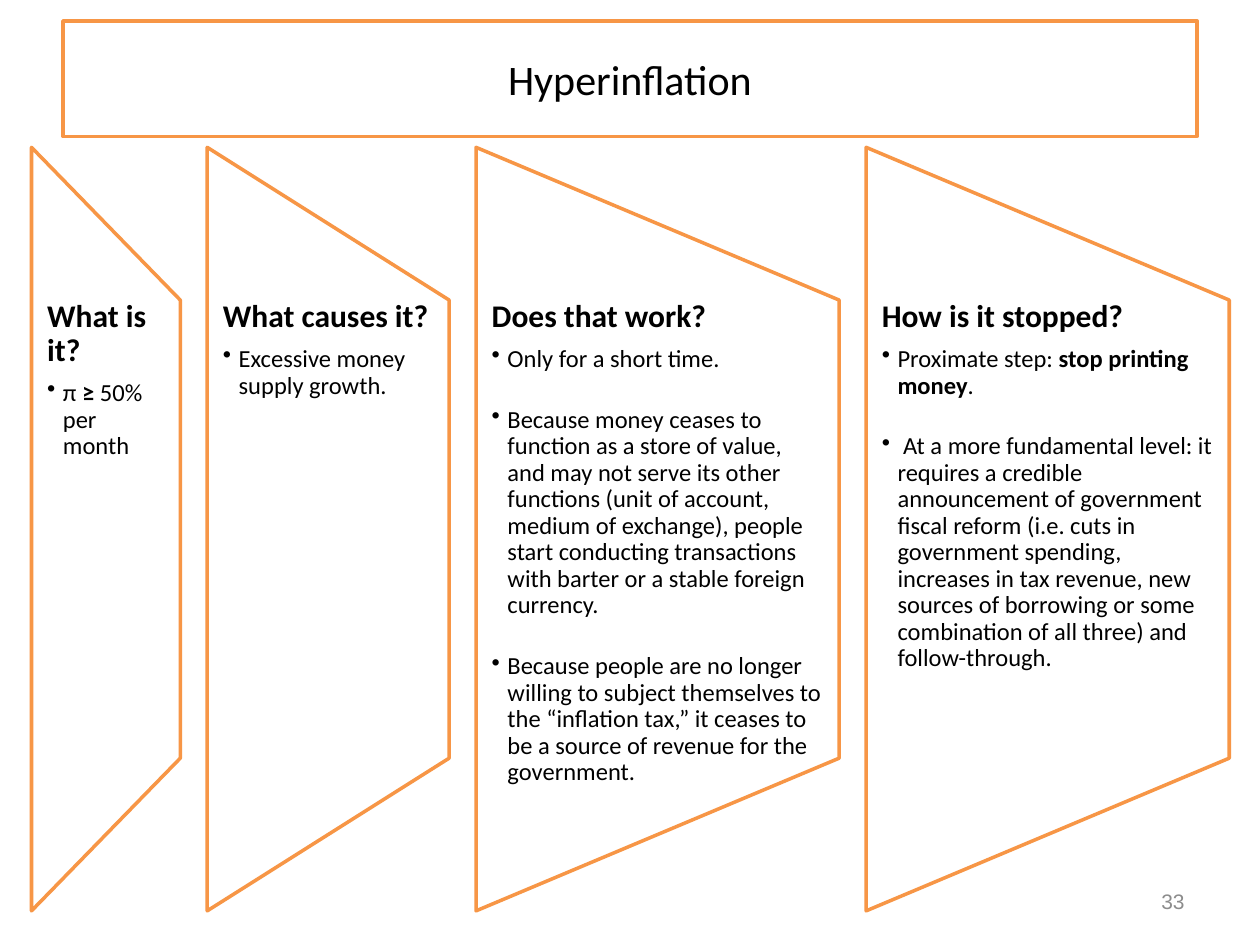
from dataclasses import dataclass

from pptx import Presentation
from pptx.dml.color import RGBColor
from pptx.enum.shapes import MSO_SHAPE as Preset
from pptx.enum.text import MSO_ANCHOR as Anchor, PP_ALIGN as Align
from pptx.oxml.xmlchemy import OxmlElement
from pptx.util import Pt

BLACK, WHITE, GRAY, ORANGE = "000000", "FFFFFF", "8C8C8C", "F79646"

PANEL_LEFT, PANEL_TOP, PANEL_HEIGHT, PANEL_GAP = 18, 84.2, 436.3, 15.4
TEXT_INSET, BULLET_INDENT = 8.96, 9
HEADING_GAP, BULLET_GAP = 7, 19.7

HEADING_FONT = {"name": "Calibri", "size": Pt(18), "bold": True}
BULLET_FONT = {"name": "Calibri", "size": Pt(14), "bold": False}
TITLE_FONT = {"name": "Calibri", "size": Pt(24)}
NUMBER_FONT = {"name": "Arial", "size": Pt(12)}


@dataclass(frozen=True)
class Run:
    text: str
    bold: bool = False


@dataclass(frozen=True)
class Panel:
    width: float
    heading: str
    bullets: tuple[tuple[Run, ...], ...]


PANELS = (
    Panel(85, "What is it?", (
        (Run("π "), Run("≥ ", True), Run("50% per month")),
    )),
    Panel(138.25, "What causes it?", (
        (Run("Excessive money supply growth."),),
    )),
    Panel(207.5, "Does that work?", (
        (Run("Only for a short time."),),
        (Run("Because money ceases to function as a store of value, and may not "
             "serve its other functions (unit of account, medium of exchange), "
             "people start conducting transactions with barter or a stable "
             "foreign currency."),),
        (Run("Because people are no longer willing to subject themselves to the "
             "“inflation tax,” it ceases to be a source of revenue for the "
             "government."),),
    )),
    Panel(207.5, "How is it stopped?", (
        (Run("Proximate step: "), Run("stop printing money", True), Run(".")),
        (Run(" At a more fundamental level: it requires a credible announcement "
             "of government fiscal reform (i.e. cuts in government spending, "
             "increases in tax revenue, new sources of borrowing or some "
             "combination of all three) and follow-through."),),
    )),
)


def color(value: str) -> RGBColor:
    return RGBColor.from_string(value)


def apply(target, values: dict) -> None:
    for attribute, value in values.items():
        setattr(target, attribute, value)


def add_outlined(slide, preset, left: float, top: float, width: float, height: float):
    """Add a white shape with an orange outline and no shadow."""
    shape = slide.shapes.add_shape(preset, Pt(left), Pt(top), Pt(width), Pt(height))
    shape.shadow.inherit = False
    shape.fill.solid()
    shape.fill.fore_color.rgb = color(WHITE)
    shape.line.color.rgb = color(ORANGE)
    shape.line.width = Pt(2)
    return shape


def add_run(paragraph, text: str, font: dict, ink: str = BLACK) -> None:
    run = paragraph.add_run()
    run.text = text
    apply(run.font, font)
    run.font.color.rgb = color(ink)


def add_line(frame, text: str, font: dict, align, ink: str = BLACK) -> None:
    """Fill a frame with one vertically centred line."""
    apply(frame, {"word_wrap": True, "vertical_anchor": Anchor.MIDDLE})
    paragraph = frame.paragraphs[0]
    paragraph.alignment = align
    add_run(paragraph, text, font, ink)


def set_bullet(paragraph) -> None:
    properties = paragraph._p.get_or_add_pPr()
    properties.set("marL", str(Pt(BULLET_INDENT)))
    properties.set("indent", str(-Pt(BULLET_INDENT)))
    bullet = OxmlElement("a:buChar")
    bullet.set("char", "•")
    properties.append(bullet)


def add_panel(slide, panel: Panel, left: float) -> None:
    # The trapezoid is laid on its side, so its own width is the panel height.
    center_x = left + panel.width / 2
    center_y = PANEL_TOP + PANEL_HEIGHT / 2
    trapezoid = add_outlined(
        slide, Preset.FLOWCHART_MANUAL_OPERATION,
        center_x - PANEL_HEIGHT / 2, center_y - panel.width / 2,
        PANEL_HEIGHT, panel.width)
    trapezoid.rotation = 270

    frame = slide.shapes.add_textbox(
        Pt(left), Pt(PANEL_TOP + PANEL_HEIGHT / 5),
        Pt(panel.width), Pt(PANEL_HEIGHT * 3 / 5)).text_frame
    apply(frame, {"word_wrap": True, "vertical_anchor": Anchor.TOP,
                  "margin_left": Pt(TEXT_INSET), "margin_right": Pt(TEXT_INSET),
                  "margin_top": 0, "margin_bottom": 0})
    heading = frame.paragraphs[0]
    apply(heading, {"line_spacing": 0.9, "space_after": Pt(HEADING_GAP)})
    add_run(heading, panel.heading, HEADING_FONT)
    for runs in panel.bullets:
        bullet = frame.add_paragraph()
        apply(bullet, {"level": 1, "line_spacing": 0.9, "space_after": Pt(BULLET_GAP)})
        set_bullet(bullet)
        for run in runs:
            add_run(bullet, run.text, BULLET_FONT | {"bold": run.bold})


def main() -> None:
    deck = Presentation()
    deck.slide_width, deck.slide_height = Pt(720), Pt(540)
    slide = deck.slides.add_slide(deck.slide_layouts[6])

    title = add_outlined(slide, Preset.RECTANGLE, 36, 12, 648, 66)
    add_line(title.text_frame, "Hyperinflation", TITLE_FONT, Align.CENTER)

    page_number = slide.shapes.add_textbox(Pt(516), Pt(500.5), Pt(168), Pt(28.75))
    add_line(page_number.text_frame, "33", NUMBER_FONT, Align.RIGHT, GRAY)

    left = PANEL_LEFT
    for panel in PANELS:
        add_panel(slide, panel, left)
        left += panel.width + PANEL_GAP

    deck.save("out.pptx")


if __name__ == "__main__":
    main()
